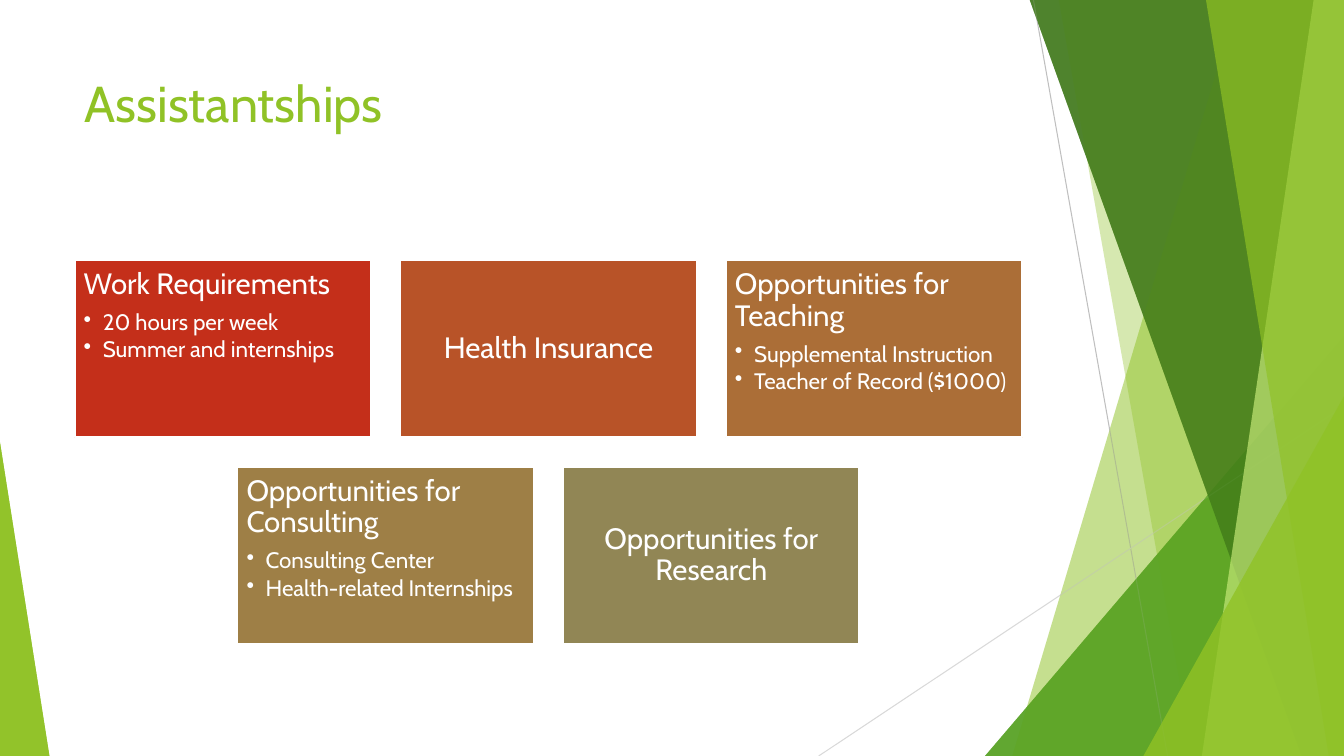
from dataclasses import dataclass

from lxml.etree import SubElement
from pptx import Presentation
from pptx.dml.color import RGBColor
from pptx.enum.shapes import MSO_CONNECTOR, MSO_SHAPE
from pptx.enum.text import MSO_ANCHOR, PP_ALIGN
from pptx.oxml.ns import qn
from pptx.util import Inches, Pt

FONT = "Cabin"
WIDE, HIGH, TOP = 13.33, 7.5, -0.01
COLORS = {
    "lime": "90C226", "green": "54A021", "dark": "3F7819", "pale": "C0E474",
    "gray": "BFBFBF", "light": "D9D9D9", "white": "FFFFFF",
    "red": "C42F1A", "rust": "B85328", "brown": "AB6E37",
    "ochre": "9E7F46", "olive": "918655",
}


@dataclass
class Band:
    """A strip from the top edge to the bottom edge, open to the right."""
    top: float
    base: float
    color: str
    alpha: int


@dataclass
class Wedge:
    """A right triangle standing on the bottom edge."""
    left: float
    top: float
    width: float
    apex: float
    color: str
    alpha: int


@dataclass
class Ray:
    start: tuple[float, float]
    end: tuple[float, float]
    color: str


@dataclass
class Card:
    head: str
    color: str
    items: tuple[str, ...] = ()


FACETS = [
    Band(12.28, 10.04, "lime", 30),
    Band(10.5, 11.83, "lime", 20),
    Wedge(9.77, 3.33, 3.56, 1, "green", 72),
    Band(10.21, 12.91, "dark", 70),
    Band(13.03, 11.92, "pale", 70),
    Band(11.96, 13.18, "lime", 65),
    Wedge(11.34, 3.93, 1.99, 1, "lime", 80),
    Wedge(0, 4.39, 0.49, 0, "lime", 85),
]
RAYS = [
    Ray((10.25, 0), (11.58, HIGH), "gray"),
    Ray((WIDE, 4.03), (8.12, HIGH), "light"),
]
ROWS = [
    [
        Card("Work Requirements", "red",
             ("20 hours per week", "Summer and internships")),
        Card("Health Insurance", "rust"),
        Card("Opportunities for Teaching", "brown",
             ("Supplemental Instruction", "Teacher of Record ($1000)")),
    ],
    [
        Card("Opportunities for Consulting", "ochre",
             ("Consulting Center", "Health-related Internships")),
        Card("Opportunities for Research", "olive"),
    ],
]


def rgb(name: str) -> RGBColor:
    return RGBColor.from_string(COLORS[name])


def paint(shape, color: str) -> None:
    shape.shadow.inherit = False
    shape.fill.solid()
    shape.fill.fore_color.rgb = rgb(color)


def draw_facet(slide, facet: Band | Wedge) -> None:
    if isinstance(facet, Band):
        pen = slide.shapes.build_freeform(Inches(facet.top), Inches(TOP))
        ends = [(WIDE, TOP), (WIDE, HIGH), (facet.base, HIGH)]
        pen.add_line_segments([(Inches(x), Inches(y)) for x, y in ends])
        shape = pen.convert_to_shape()
    else:
        shape = slide.shapes.add_shape(
            MSO_SHAPE.ISOSCELES_TRIANGLE, Inches(facet.left), Inches(facet.top),
            Inches(facet.width), Inches(HIGH - facet.top))
        shape.adjustments[0] = facet.apex
    paint(shape, facet.color)
    shape.line.fill.background()
    tint = shape._element.spPr.find(qn("a:solidFill"))[0]
    SubElement(tint, qn("a:alpha"), val=str(facet.alpha * 1000))


def draw_ray(slide, ray: Ray) -> None:
    line = slide.shapes.add_connector(
        MSO_CONNECTOR.STRAIGHT, *map(Inches, ray.start + ray.end))
    line.line.color.rgb = rgb(ray.color)
    line.line.width = Pt(0.75)
    SubElement(line._element.spPr, qn("a:effectLst"))


def set_style(para, size: int, after: float) -> None:
    para.font.name = FONT
    para.font.size = Pt(size)
    para.font.color.rgb = rgb("white")
    para.line_spacing = 0.9
    para.space_after = Pt(after)


def draw_card(slide, card: Card, left: float, top: float) -> None:
    box = slide.shapes.add_shape(
        MSO_SHAPE.RECTANGLE, Inches(left), Inches(top), Inches(2.94), Inches(1.76))
    paint(box, card.color)
    box.line.color.rgb = rgb("white")
    box.line.width = Pt(1.5)

    frame = box.text_frame
    frame.word_wrap = True
    frame.margin_left = frame.margin_right = Inches(0.09)
    frame.margin_top = frame.margin_bottom = Inches(0.09)
    frame.vertical_anchor = MSO_ANCHOR.TOP if card.items else MSO_ANCHOR.MIDDLE
    head = frame.paragraphs[0]
    head.text = card.head
    head.alignment = PP_ALIGN.LEFT if card.items else PP_ALIGN.CENTER
    set_style(head, 21, 7.35)

    for item in card.items:
        para = frame.add_paragraph()
        para.text = item
        para.level = 1
        para.alignment = PP_ALIGN.LEFT
        set_style(para, 16, 2.4)
        props = para._p.get_or_add_pPr()
        props.set("marL", str(Inches(0.19)))
        props.set("indent", str(-Inches(0.19)))
        bullet = props.makeelement(qn("a:buChar"), {"char": "•"})
        props.find(qn("a:spcAft")).addnext(bullet)


def set_title(slide, text: str) -> None:
    title = slide.shapes.title
    title.left, title.top = Inches(0.74), Inches(0.67)
    title.width, title.height = Inches(9.4), Inches(1.44)
    frame = title.text_frame
    frame.text = text
    frame.vertical_anchor = MSO_ANCHOR.TOP
    para = frame.paragraphs[0]
    para.alignment = PP_ALIGN.LEFT
    para.font.name = FONT
    para.font.size = Pt(36)
    para.font.color.rgb = rgb("lime")


def main() -> None:
    deck = Presentation()
    deck.slide_width, deck.slide_height = Inches(WIDE), Inches(HIGH)
    slide = deck.slides.add_slide(deck.slide_layouts[5])
    set_title(slide, "Assistantships")

    # Two layers of facets, with the thin rays between them
    for rays in (RAYS, []):
        for facet in FACETS:
            draw_facet(slide, facet)
        for ray in rays:
            draw_ray(slide, ray)

    # Cards, each row centred on the widest one
    for row, cards in enumerate(ROWS):
        shift = (len(ROWS[0]) - len(cards)) / 2
        for col, card in enumerate(cards):
            draw_card(slide, card, 0.74 + 3.23 * (col + shift), 2.58 + 2.05 * row)

    deck.save("out.pptx")


if __name__ == "__main__":
    main()
